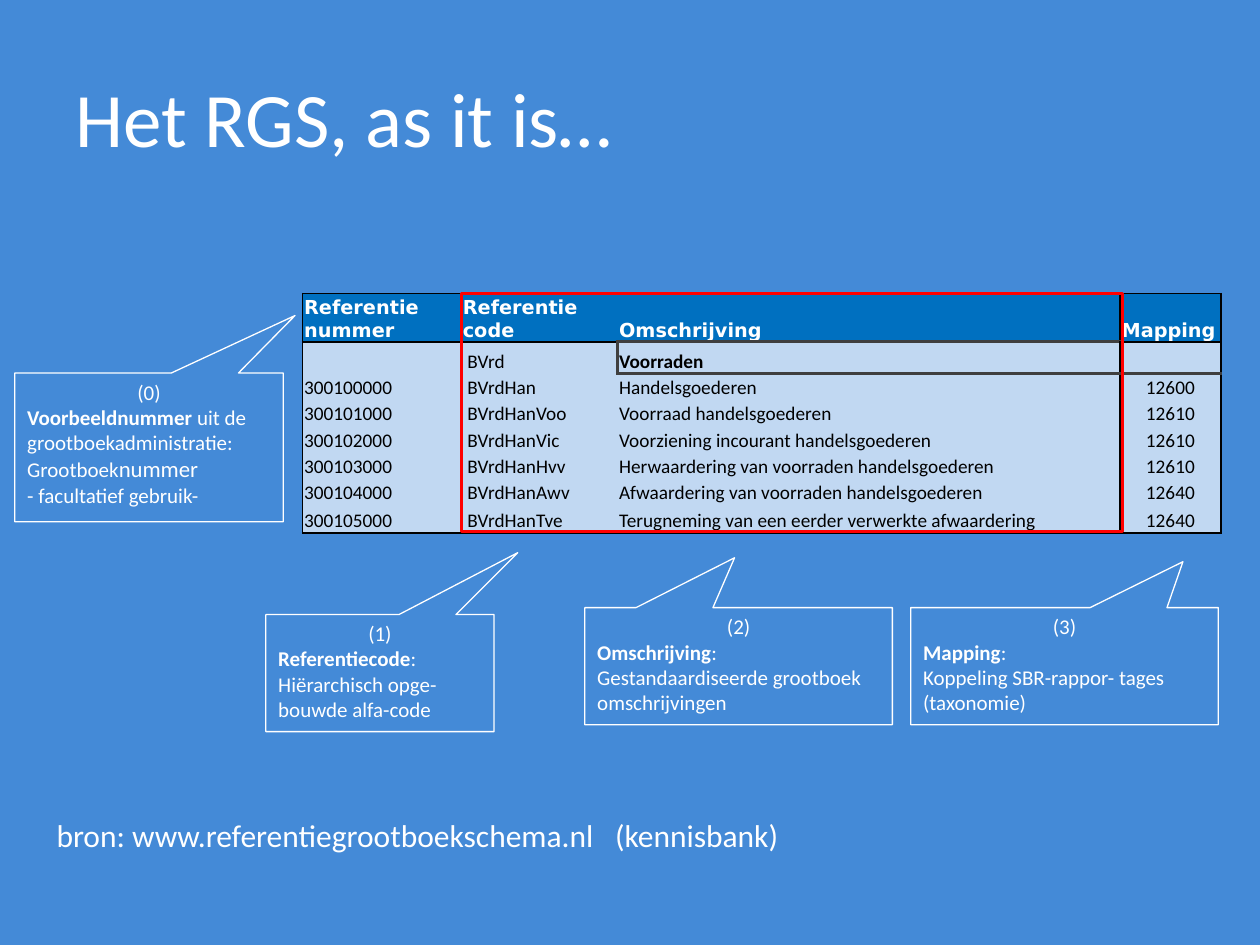
"""Build the slide that explains the columns of the RGS ledger scheme."""
from typing import NamedTuple, Optional

from lxml.etree import SubElement
from pptx import Presentation
from pptx.dml.color import RGBColor
from pptx.enum.shapes import MSO_SHAPE as Shape
from pptx.enum.text import MSO_ANCHOR as Anchor, PP_ALIGN as Align
from pptx.oxml.ns import qn
from pptx.util import Cm, Pt

SKY = RGBColor(0x44, 0x8A, 0xD7)
WHITE = RGBColor(0xFF, 0xFF, 0xFF)
BLACK = RGBColor(0x00, 0x00, 0x00)
HEADER_BLUE = RGBColor(0x00, 0x70, 0xC0)
BODY_BLUE = RGBColor(0xC1, 0xD8, 0xF2)
GREY = RGBColor(0x3F, 0x3F, 0x3F)
RED = RGBColor(0xFF, 0x00, 0x00)


class Edge(NamedTuple):
    colour: RGBColor
    points: float


class Span(NamedTuple):
    text: str
    bold: bool = False
    size: float = 12


class Callout(NamedTuple):
    number: int
    left: float
    top: float
    width: float
    height: float
    tip: tuple[float, float]
    lines: tuple[tuple[Span, ...], ...]


THIN = Edge(BLACK, 1)
THICK = Edge(GREY, 2)
COLUMN_WIDTHS = (3.2, 3.15, 10.13, 2.03)
ROW_HEIGHTS = (0.97, 0.64, 0.53, 0.53, 0.53, 0.53, 0.53, 0.56)
LEDGER = (
    ("Referentie nummer", "Referentie code", "Omschrijving", "Mapping"),
    ("", "BVrd", "Voorraden", ""),
    ("300100000", "BVrdHan", "Handelsgoederen", "12600"),
    ("300101000", "BVrdHanVoo", "Voorraad handelsgoederen", "12610"),
    ("300102000", "BVrdHanVic", "Voorziening incourant handelsgoederen", "12610"),
    ("300103000", "BVrdHanHvv", "Herwaardering van voorraden handelsgoederen", "12610"),
    ("300104000", "BVrdHanAwv", "Afwaardering van voorraden handelsgoederen", "12640"),
    ("300105000", "BVrdHanTve", "Terugneming van een eerder verwerkte afwaardering", "12640"),
)
CALLOUTS = (
    Callout(0, 0.3, 7.52, 5.41, 3.0, (0.544, -0.886), (
        (Span("Voorbeeldnummer", True),
         Span(" uit de grootboekadministratie: Grootboek"), Span("nummer", size=13)),
        (Span("- facultatief gebruik-"),))),
    Callout(2, 11.79, 12.25, 6.2, 2.36, (-0.013, -0.926), (
        (Span("Omschrijving", True), Span(":")),
        (Span("Gestandaardiseerde grootboek omschrijvingen"),))),
    Callout(1, 5.36, 12.39, 4.6, 2.36, (0.604, -1.029), (
        (Span("Referentiecode", True), Span(":")),
        (Span("Hiërarchisch opge- bouwde alfa-code"),))),
    Callout(3, 18.36, 12.25, 6.2, 2.36, (0.385, -0.892), (
        (Span("Mapping", True), Span(":")),
        (Span("Koppeling SBR-rappor- tages (taxonomie)"),))),
)


def write(paragraph, text: str, *, size: float, bold: bool = False,
          colour: RGBColor = WHITE, face: str = "Calibri", align=Align.LEFT) -> None:
    paragraph.alignment = align
    if not text:
        paragraph._p.get_or_add_endParaRPr().set("sz", str(int(size * 100)))
        return
    run = paragraph.add_run()
    run.text = text
    run.font.size, run.font.bold, run.font.name = Pt(size), bold, face
    run.font.color.rgb = colour


def add_text_frame(slide, left: float, top: float, width: float, height: float, anchor):
    frame = slide.shapes.add_textbox(Cm(left), Cm(top), Cm(width), Cm(height)).text_frame
    frame.word_wrap = True
    frame.vertical_anchor = anchor
    return frame


def add_outline(slide, kind, left: float, top: float, width: float, height: float, edge: Edge):
    outline = slide.shapes.add_shape(kind, Cm(left), Cm(top), Cm(width), Cm(height))
    outline.shadow.inherit = False
    outline.fill.background()
    outline.line.color.rgb = edge.colour
    outline.line.width = Pt(edge.points)
    return outline


def add_callout(slide, callout: Callout) -> None:
    bubble = add_outline(slide, Shape.RECTANGULAR_CALLOUT, callout.left, callout.top,
                         callout.width, callout.height, Edge(WHITE, 0.75))
    bubble.adjustments[0], bubble.adjustments[1] = callout.tip
    frame = bubble.text_frame
    frame.word_wrap = True
    frame.vertical_anchor = Anchor.TOP
    write(frame.paragraphs[0], f"({callout.number})", size=12, align=Align.CENTER)
    for line in callout.lines:
        paragraph = frame.add_paragraph()
        for span in line:
            write(paragraph, span.text, size=span.size, bold=span.bold)


def vertical_edge(row: int, boundary: int) -> Optional[Edge]:
    if boundary == 2:
        return THICK if row == 1 else None
    return THIN


def horizontal_edge(boundary: int, column: int) -> Optional[Edge]:
    if boundary == 1:
        return THICK if column == 2 else THIN
    if boundary == 2:
        return THICK if column >= 2 else None
    return THIN if boundary in (0, len(LEDGER)) else None


def set_borders(cell, row: int, column: int) -> None:
    edges = {
        "a:lnL": vertical_edge(row, column),
        "a:lnR": vertical_edge(row, column + 1),
        "a:lnT": horizontal_edge(row, column),
        "a:lnB": horizontal_edge(row + 1, column),
    }
    properties = cell._tc.get_or_add_tcPr()
    for tag, edge in edges.items():
        border = SubElement(properties, qn(tag))
        if edge is None:
            SubElement(border, qn("a:noFill"))
        else:
            border.set("w", str(Pt(edge.points)))
            fill = SubElement(border, qn("a:solidFill"))
            SubElement(fill, qn("a:srgbClr")).set("val", str(edge.colour))


def fill_cell(cell, text: str, row: int, column: int) -> None:
    header = row == 0
    set_borders(cell, row, column)
    cell.fill.solid()
    cell.fill.fore_color.rgb = HEADER_BLUE if header else BODY_BLUE
    cell.vertical_anchor = Anchor.BOTTOM
    cell.margin_left = Cm(0.12 if column == 1 and not header else 0.03)
    cell.margin_top = cell.margin_right = Cm(0.03)
    cell.margin_bottom = 0
    write(cell.text_frame.paragraphs[0], text, size=11,
          bold=header or text == "Voorraden",
          colour=WHITE if header else BLACK,
          face="DejaVu Sans" if header else "Calibri",
          align=Align.CENTER if column == 3 and not header else Align.LEFT)


def add_ledger(slide, left: float, top: float) -> None:
    ledger = slide.shapes.add_table(
        len(LEDGER), len(COLUMN_WIDTHS), Cm(left), Cm(top),
        Cm(sum(COLUMN_WIDTHS)), Cm(sum(ROW_HEIGHTS))).table
    ledger.first_row = ledger.horz_banding = False
    for column, width in zip(ledger.columns, COLUMN_WIDTHS):
        column.width = Cm(width)
    for row, (height, entries) in enumerate(zip(ROW_HEIGHTS, LEDGER)):
        ledger.rows[row].height = Cm(height)
        for column, text in enumerate(entries):
            fill_cell(ledger.cell(row, column), text, row, column)


def add_source(slide) -> None:
    source = add_text_frame(slide, 0.89, 16.33, 16.79, 1.02, Anchor.TOP).paragraphs[0]
    stops = SubElement(source._p.get_or_add_pPr(), qn("a:tabLst"))
    SubElement(stops, qn("a:tab"), pos=str(Cm(11.26)), algn="l")
    write(source, "bron: www.referentiegrootboekschema.nl\t(kennisbank)", size=18)


def main() -> None:
    deck = Presentation()
    deck.slide_width, deck.slide_height = Cm(25.4), Cm(19.05)
    slide = deck.slides.add_slide(deck.slide_layouts[6])
    slide.background.fill.solid()
    slide.background.fill.fore_color.rgb = SKY
    title = add_text_frame(slide, 1.27, 0.76, 22.86, 3.18, Anchor.MIDDLE)
    write(title.paragraphs[0], "Het RGS, as it is…", size=44)
    for callout in CALLOUTS:
        add_callout(slide, callout)
    add_source(slide)
    add_ledger(slide, 6.1, 5.92)
    add_outline(slide, Shape.RECTANGLE, 9.3, 5.92, 13.33, 4.8, Edge(RED, 2))
    deck.save("out.pptx")


if __name__ == "__main__":
    main()
